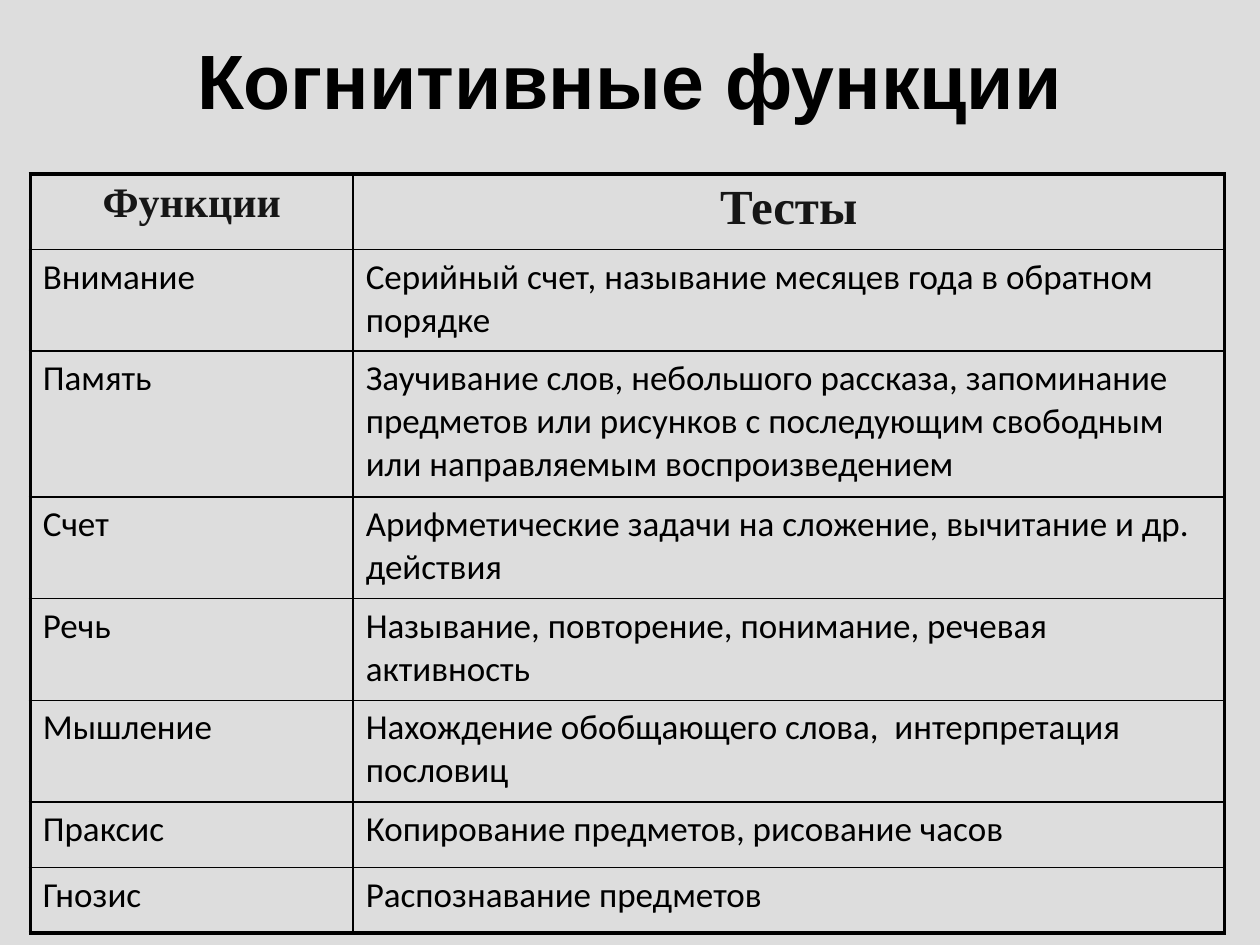
from dataclasses import dataclass

from lxml.etree import SubElement
from pptx import Presentation
from pptx.dml.color import RGBColor
from pptx.enum.text import MSO_ANCHOR as Anchor, PP_ALIGN as Align
from pptx.oxml.ns import qn
from pptx.util import Cm, Pt


@dataclass(frozen=True)
class TextStyle:
    font: str
    size: float
    color: str
    bold: bool = False
    align: Align = Align.LEFT


@dataclass(frozen=True)
class Theme:
    background: str = "DDDDDD"
    line: str = "000000"
    inner_line: float = 1
    outer_line: float = 2.25
    title: TextStyle = TextStyle("Arial", 44, "000000", True, Align.CENTER)
    functions_head: TextStyle = TextStyle("Times New Roman", 24, "161616", True, Align.CENTER)
    tests_head: TextStyle = TextStyle("Times New Roman", 28, "161616", True, Align.CENTER)
    body: TextStyle = TextStyle("Calibri", 20, "000000")


@dataclass(frozen=True)
class TestRow:
    function: str
    tests: str
    height: float


THEME = Theme()
COLUMN_WIDTHS = (6.51, 17.56)
ROWS = (
    TestRow("Функции", "Тесты", 1.52),
    TestRow("Внимание", "Серийный счет, называние месяцев года в обратном порядке", 2.05),
    TestRow(
        "Память",
        "Заучивание слов, небольшого рассказа, запоминание предметов или рисунков "
        "с последующим свободным или направляемым воспроизведением",
        2.94,
    ),
    TestRow("Счет", "Арифметические задачи на сложение, вычитание и др. действия", 2.05),
    TestRow("Речь", "Называние, повторение, понимание, речевая активность", 2.05),
    TestRow("Мышление", "Нахождение обобщающего слова,  интерпретация пословиц", 2.05),
    TestRow("Праксис", "Копирование предметов, рисование часов", 1.32),
    TestRow("Гнозис", "Распознавание предметов", 1.32),
)


def write_text(frame, text: str, style: TextStyle) -> None:
    """Fill the first paragraph of a text frame with one styled run."""
    frame.word_wrap = True
    para = frame.paragraphs[0]
    para.alignment = style.align
    para.space_before = Pt(0)
    span = para.add_run()
    span.text = text
    span.font.name = style.font
    span.font.size = Pt(style.size)
    span.font.bold = style.bold
    span.font.color.rgb = RGBColor.from_string(style.color)


def draw_borders(cell, outer_sides: dict[str, bool]) -> None:
    """Line each side of a cell, heavier on the table's outer edge."""
    properties = cell._tc.get_or_add_tcPr()
    for side, is_outer in outer_sides.items():
        width = THEME.outer_line if is_outer else THEME.inner_line
        border = SubElement(properties, qn(f"a:ln{side}"), w=str(Pt(width)))
        fill = SubElement(border, qn("a:solidFill"))
        SubElement(fill, qn("a:srgbClr"), val=THEME.line)


def add_title(page, text: str) -> None:
    """Add the centred slide heading."""
    box = page.shapes.add_textbox(Cm(2.12), Cm(0.64), Cm(21.16), Cm(1.91))
    box.text_frame.vertical_anchor = Anchor.MIDDLE
    write_text(box.text_frame, text, THEME.title)


def add_test_table(page, rows: tuple[TestRow, ...]) -> None:
    """Add the table that pairs each function with its tests."""
    table = page.shapes.add_table(
        len(rows), len(COLUMN_WIDTHS), Cm(0.61), Cm(3.51),
        Cm(sum(COLUMN_WIDTHS)), Cm(sum(row.height for row in rows)),
    ).table
    table.first_row = False
    table.horz_banding = False
    for column, width in zip(table.columns, COLUMN_WIDTHS):
        column.width = Cm(width)
    last_row, last_column = len(rows) - 1, len(COLUMN_WIDTHS) - 1
    head_styles = (THEME.functions_head, THEME.tests_head)
    for r, row in enumerate(rows):
        table.rows[r].height = Cm(row.height)
        for c, text in enumerate((row.function, row.tests)):
            cell = table.cell(r, c)
            write_text(cell.text_frame, text, head_styles[c] if r == 0 else THEME.body)
            draw_borders(cell, {
                "L": c == 0, "R": c == last_column, "T": r == 0, "B": r == last_row,
            })
            cell.fill.background()


def main() -> None:
    """Build the deck and save it."""
    deck = Presentation()
    deck.slide_width, deck.slide_height = Cm(25.4), Cm(19.05)
    page = deck.slides.add_slide(deck.slide_layouts[6])
    page.background.fill.solid()
    page.background.fill.fore_color.rgb = RGBColor.from_string(THEME.background)
    add_test_table(page, ROWS)
    add_title(page, "Когнитивные функции")
    deck.save("out.pptx")


if __name__ == "__main__":
    main()
